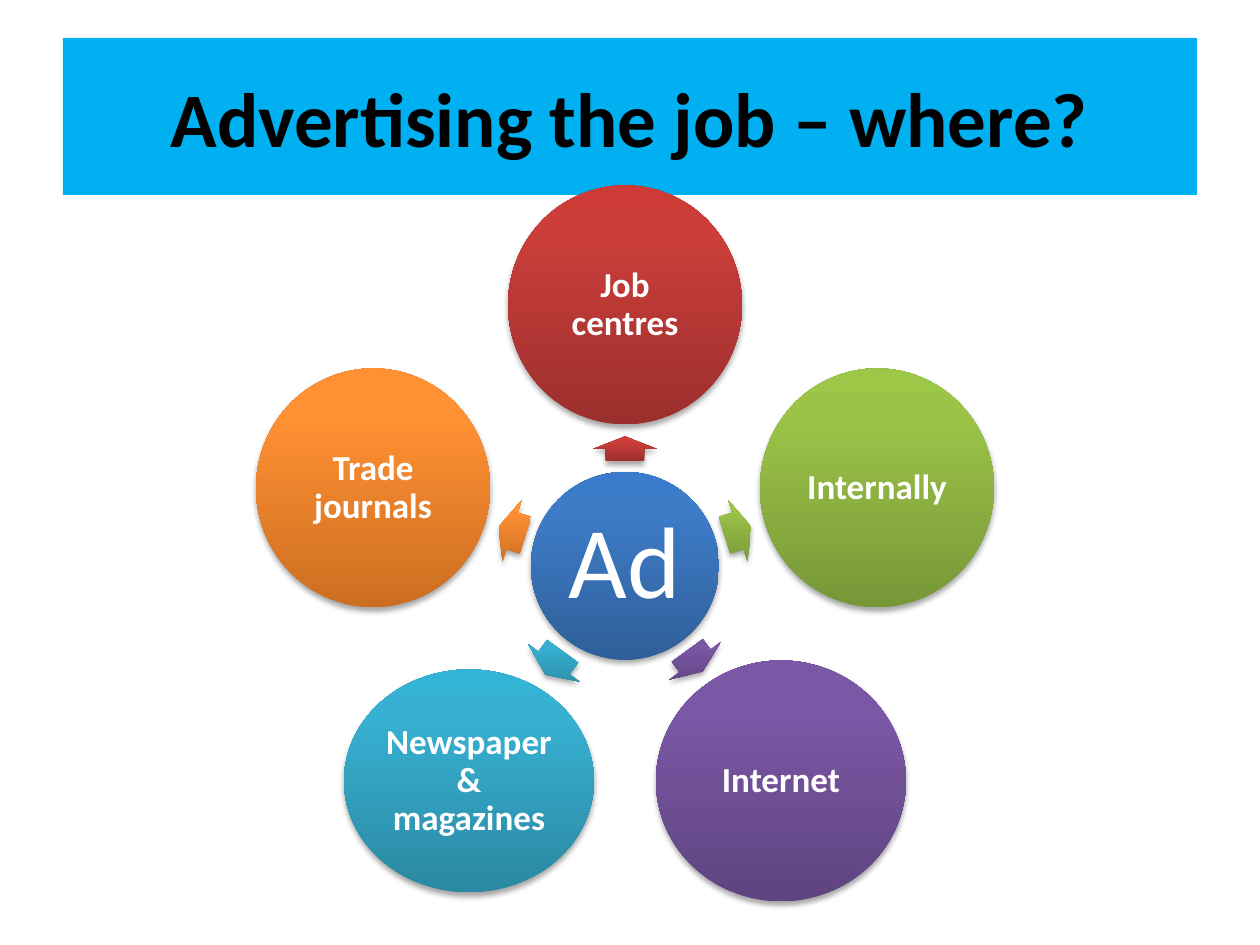
from dataclasses import dataclass

from lxml import etree
from pptx import Presentation
from pptx.dml.color import RGBColor
from pptx.enum.shapes import MSO_SHAPE
from pptx.enum.text import MSO_ANCHOR, PP_ALIGN
from pptx.oxml import parse_xml
from pptx.util import Emu, Pt

RECTANGLE = MSO_SHAPE.RECTANGLE
ELLIPSE = MSO_SHAPE.OVAL
ARROW = MSO_SHAPE.RIGHT_ARROW
CENTER = PP_ALIGN.CENTER
MIDDLE = MSO_ANCHOR.MIDDLE

PX_PER_INCH = 126
EMU_PER_PX = 914400 / PX_PER_INCH
DRAWING_NS = "http://schemas.openxmlformats.org/drawingml/2006/main"
ARROW_BREADTH = 64


@dataclass(frozen=True)
class Shades:
    """Gradient from the bottom edge, through 80 %, to the top edge."""
    bottom: str
    upper: str
    top: str


@dataclass(frozen=True)
class Theme:
    font: str = "Calibri"
    banner: str = "00B0F0"
    title_text: str = "000000"
    bubble_text: str = "FFFFFF"
    title_size: int = 44
    hub_size: int = 58
    place_size: int = 20
    blue: Shades = Shades("2F5F99", "3D7CC7", "3A7CCB")
    red: Shades = Shades("9C2F2D", "CB3E3A", "CE3B37")
    green: Shades = Shades("779737", "9BC348", "9DC746")
    purple: Shades = Shades("5F4480", "7B58A6", "7C57A8")
    teal: Shades = Shades("2A88A2", "37B1D2", "34B4D6")
    orange: Shades = Shades("CC6E20", "FF9034", "FF9136")


THEME = Theme()


@dataclass(frozen=True)
class Bubble:
    label: str
    center: tuple[int, int]
    size: tuple[int, int]
    shades: Shades
    type_size: int = THEME.place_size
    bold: bool = True
    inset: int = 4


@dataclass(frozen=True)
class Pointer:
    center: tuple[int, int]
    length: int
    rotation: float


HUB = Bubble("Ad", (625, 566), (188, 188), THEME.blue, THEME.hub_size, False, 10)
PLACES = [
    (Pointer((625, 449), 25, 270),
     Bubble("Job centres", (625, 305), (234, 239), THEME.red)),
    (Pointer((738, 531), 28, 342.7),
     Bubble("Internally", (877, 488), (234, 239), THEME.green)),
    (Pointer((695, 661), 26, 54),
     Bubble("Internet", (781, 781), (250, 241), THEME.purple)),
    (Pointer((554, 663), 29, 126),
     Bubble("Newspaper & magazines", (469, 781), (250, 223), THEME.teal)),
    (Pointer((512, 531), 28, 197.3),
     Bubble("Trade journals", (373, 488), (234, 239), THEME.orange)),
]


def px(length: float) -> Emu:
    return Emu(round(length * EMU_PER_PX))


def add_centered(slide, kind, center: tuple[int, int], size: tuple[int, int]):
    (x, y), (width, height) = center, size
    return slide.shapes.add_shape(
        kind, px(x - width / 2), px(y - height / 2), px(width), px(height))


def apply_glossy_style(shape, shades: Shades) -> None:
    """Give an upright three-stop gradient, no outline and a soft drop shadow."""
    shape.shadow.inherit = False
    shape.line.fill.background()
    shape.fill.background()
    stops = "".join(
        f'<a:gs pos="{position * 1000}"><a:srgbClr val="{color}"/></a:gs>'
        for position, color in ((0, shades.bottom), (80, shades.upper), (100, shades.top)))
    gradient = parse_xml(
        f'<a:gradFill xmlns:a="{DRAWING_NS}" rotWithShape="0"><a:gsLst>{stops}</a:gsLst>'
        '<a:lin ang="16200000" scaled="0"/></a:gradFill>')
    properties = shape._element.spPr
    properties.replace(properties.find(f"{{{DRAWING_NS}}}noFill"), gradient)

    effects = properties.find(f"{{{DRAWING_NS}}}effectLst")
    shadow = etree.SubElement(
        effects, f"{{{DRAWING_NS}}}outerShdw", blurRad="40000", dist="23000",
        dir="5400000", rotWithShape="0")
    shadow_color = etree.SubElement(shadow, f"{{{DRAWING_NS}}}srgbClr", val="000000")
    etree.SubElement(shadow_color, f"{{{DRAWING_NS}}}alpha", val="35000")


def write_text(shape, text: str, size: int, color: str, bold: bool):
    frame = shape.text_frame
    frame.word_wrap = True
    frame.vertical_anchor = MIDDLE
    paragraph = frame.paragraphs[0]
    paragraph.text = text
    paragraph.alignment = CENTER
    font = paragraph.font
    font.name = THEME.font
    font.size = Pt(size)
    font.bold = bold
    font.color.rgb = RGBColor.from_string(color)
    return frame


def draw_banner(slide) -> None:
    banner = slide.shapes.add_shape(RECTANGLE, px(63), px(38), px(1134), px(157))
    banner.shadow.inherit = False
    banner.fill.solid()
    banner.fill.fore_color.rgb = RGBColor.from_string(THEME.banner)
    banner.line.fill.background()
    write_text(banner, "Advertising the job – where?",
               THEME.title_size, THEME.title_text, True)


def draw_bubble(slide, bubble: Bubble) -> None:
    circle = add_centered(slide, ELLIPSE, bubble.center, bubble.size)
    apply_glossy_style(circle, bubble.shades)
    frame = write_text(circle, bubble.label, bubble.type_size,
                       THEME.bubble_text, bubble.bold)
    frame.margin_left = frame.margin_right = px(bubble.inset)
    frame.margin_top = frame.margin_bottom = px(bubble.inset)
    frame.paragraphs[0].line_spacing = 0.9


def draw_pointer(slide, pointer: Pointer, shades: Shades) -> None:
    arrow = add_centered(slide, ARROW, pointer.center, (pointer.length, ARROW_BREADTH))
    arrow.adjustments[0] = 0.6
    arrow.adjustments[1] = 0.5
    arrow.rotation = pointer.rotation
    apply_glossy_style(arrow, shades)


def main() -> None:
    presentation = Presentation()
    presentation.slide_width = px(1260)
    presentation.slide_height = px(945)
    slide = presentation.slides.add_slide(presentation.slide_layouts[6])

    draw_banner(slide)
    draw_bubble(slide, HUB)
    for pointer, place in PLACES:
        draw_pointer(slide, pointer, place.shades)
        draw_bubble(slide, place)
    presentation.save("out.pptx")


if __name__ == "__main__":
    main()
